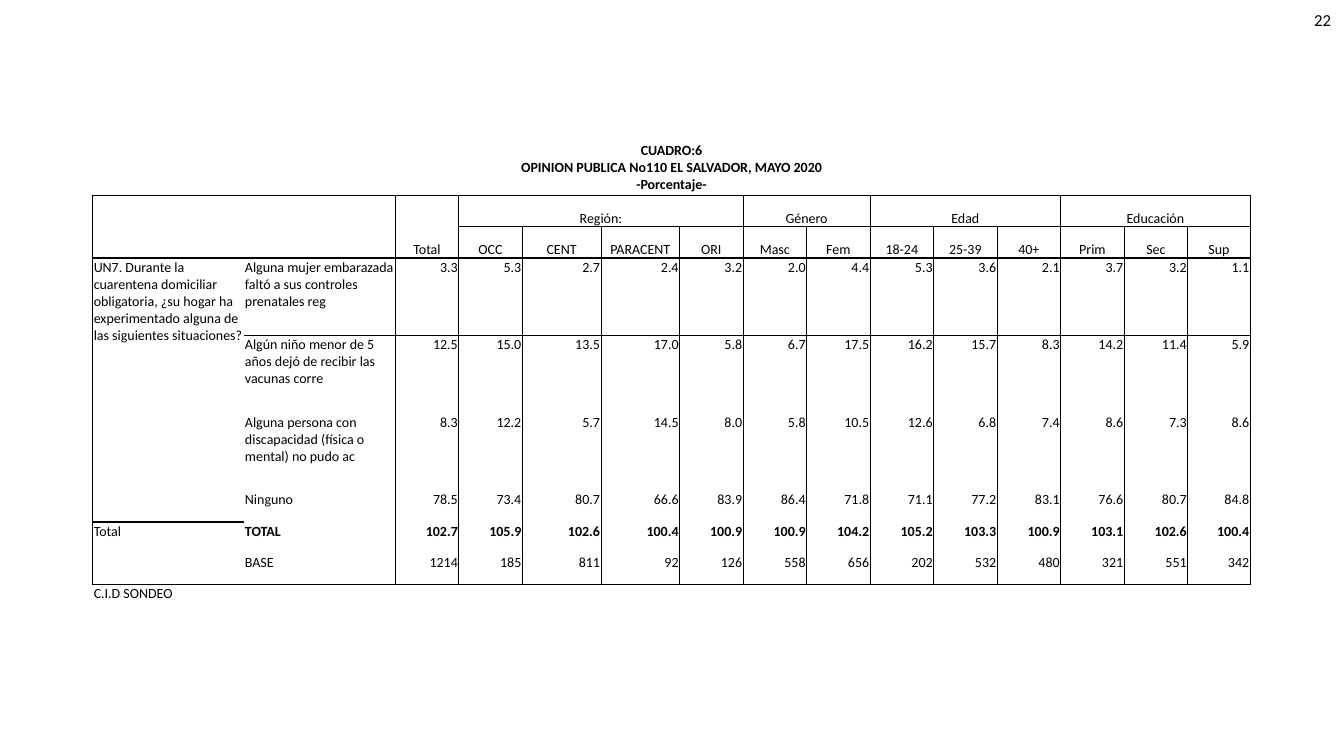
from lxml import etree
from pptx import Presentation
from pptx import util as u
from pptx.dml import color
from pptx.enum import text
from pptx.oxml import ns

BLACK = color.RGBColor(0x00, 0x00, 0x00)
NO_GRID = "{2D5ABB26-0587-4C30-8999-92F81FD0307C}"
LEFT, CENTER, RIGHT = text.PP_ALIGN.LEFT, text.PP_ALIGN.CENTER, text.PP_ALIGN.RIGHT
TOP, MIDDLE, BOTTOM = text.MSO_ANCHOR.TOP, text.MSO_ANCHOR.MIDDLE, text.MSO_ANCHOR.BOTTOM

COL_WIDTHS = [1.5] * 2 + [0.63] * 2 + [0.78] * 2 + [0.63] * 8 + [0.62]
ROW_HEIGHTS = [0.56] + [0.31] * 2 + [0.77] * 3 + [0.31] * 3 + [0.77]
LAST_COL = len(COL_WIDTHS) - 1
FIRST_DATA, LAST_DATA, SOURCE_ROW = 3, 8, 9

TITLE = ["CUADRO:6\vOPINION PUBLICA No110 EL SALVADOR, MAYO 2020", "-Porcentaje-"]
QUESTION = ("UN7. Durante la cuarentena domiciliar obligatoria, "
            "¿su hogar ha experimentado alguna de las siguientes situaciones?")
GROUPS = [
    ("Región:", ["OCC", "CENT", "PARACENT", "ORI"]),
    ("Género", ["Masc", "Fem"]),
    ("Edad", ["18-24", "25-39", "40+"]),
    ("Educación", ["Prim", "Sec", "Sup"]),
]
ANSWERS = [
    ("Alguna mujer embarazada faltó a sus controles prenatales reg",
     "3.3 5.3 2.7 2.4 3.2 2.0 4.4 5.3 3.6 2.1 3.7 3.2 1.1"),
    ("Algún niño menor de 5 años dejó de recibir las vacunas corre",
     "12.5 15.0 13.5 17.0 5.8 6.7 17.5 16.2 15.7 8.3 14.2 11.4 5.9"),
    ("Alguna persona con discapacidad (física o mental) no pudo ac",
     "8.3 12.2 5.7 14.5 8.0 5.8 10.5 12.6 6.8 7.4 8.6 7.3 8.6"),
    ("Ninguno",
     "78.5 73.4 80.7 66.6 83.9 86.4 71.8 71.1 77.2 83.1 76.6 80.7 84.8"),
    ("TOTAL",
     "102.7 105.9 102.6 100.4 100.9 100.9 104.2 105.2 103.3 100.9 103.1 102.6 100.4"),
    ("BASE",
     "1214 185 811 92 126 558 656 202 532 480 321 551 342"),
]


def borders(row, col, last_row, last_col):
    if row == 0:
        return {"B": 1}
    if row == SOURCE_ROW:
        return {"T": 1}
    thin = 0.5 if col > 2 else 0
    return {
        "L": {0: 1, 1: 0, 2: 1}.get(col, 0.5),
        "R": {0: 0, 1: 1, LAST_COL: 1}.get(last_col, 0.5),
        "T": 1 if row in (1, FIRST_DATA) else thin if row == 2 else 0,
        "B": 1 if last_row in (2, LAST_DATA) else thin if last_row == 1 else 0,
    }


class SlideBuilder:
    font = {"name": "Calibri", "size": u.Pt(10), "bold": False}

    def __init__(self, prs):
        self.s = prs.slides.add_slide(prs.slide_layouts[6])

    def fill_text(self, tf, lines, align, **changes):
        for i, line in enumerate(lines):
            p = tf.paragraphs[0] if i == 0 else tf.add_paragraph()
            p.text = line
            p.alignment = align
            for r in p.runs:
                for name, value in {**self.font, **changes}.items():
                    setattr(r.font, name, value)
                r.font.color.rgb = BLACK

    def text_box(self, box, line, align, **changes):
        tf = self.s.shapes.add_textbox(*map(u.Inches, box)).text_frame
        tf.word_wrap = True
        tf.vertical_anchor = MIDDLE
        self.fill_text(tf, [line], align, **changes)

    def add_table(self, left, top):
        box = left, top, sum(COL_WIDTHS), sum(ROW_HEIGHTS)
        frame = self.s.shapes.add_table(
            len(ROW_HEIGHTS), len(COL_WIDTHS), *map(u.Inches, box))
        self.table = frame.table
        self.table.first_row = self.table.horz_banding = False
        self.table._tbl.tblPr[0].text = NO_GRID
        for column, width in zip(self.table.columns, COL_WIDTHS):
            column.width = u.Inches(width)
        for row, height in zip(self.table.rows, ROW_HEIGHTS):
            row.height = u.Inches(height)
        for cell in self.table.iter_cells():
            for side in ("left", "right", "top"):
                setattr(cell, f"margin_{side}", u.Inches(0.01))
            cell.margin_bottom = 0

    def cell(self, row, col, lines, align=LEFT, anchor=TOP, span=(1, 1), **changes):
        c = self.table.cell(row, col)
        last_row, last_col = row + span[0] - 1, col + span[1] - 1
        if span != (1, 1):
            c.merge(self.table.cell(last_row, last_col))
        c.vertical_anchor = anchor
        self.fill_text(c.text_frame, lines, align, **changes)
        widths = borders(row, col, last_row, last_col)
        tc_pr = c._tc.get_or_add_tcPr()
        for side in "LRTB":
            width = widths.get(side, 0)
            if width:
                ln = etree.SubElement(tc_pr, ns.qn(f"a:ln{side}"), w=str(u.Pt(width)))
                fill = etree.SubElement(ln, ns.qn("a:solidFill"))
                etree.SubElement(fill, ns.qn("a:srgbClr"), val=str(BLACK))
        c.fill.background()


def main():
    prs = Presentation()
    prs.slide_width, prs.slide_height = u.Inches(13.33), u.Inches(7.5)
    b = SlideBuilder(prs)
    b.text_box((10.3, 0, 3, 0.4), "22", RIGHT, size=u.Pt(12))
    b.add_table(0.92, 1.38)

    full_width = (1, LAST_COL + 1)
    b.cell(0, 0, TITLE, CENTER, MIDDLE, full_width, bold=True)
    b.cell(1, 0, [], span=(2, 2))
    b.cell(1, 2, ["Total"], CENTER, BOTTOM, (2, 1))
    col = 3
    for group, labels in GROUPS:
        b.cell(1, col, [group], CENTER, BOTTOM, (1, len(labels)))
        for i, label in enumerate(labels):
            b.cell(2, col + i, [label], CENTER, BOTTOM)
        col += len(labels)

    b.cell(FIRST_DATA, 0, [QUESTION], span=(4, 1))
    b.cell(7, 0, ["Total"], span=(2, 1))
    for row, (answer, values) in enumerate(ANSWERS, FIRST_DATA):
        bold = answer == "TOTAL"
        b.cell(row, 1, [answer], bold=bold)
        for col, value in enumerate(values.split(), 2):
            b.cell(row, col, [value], RIGHT, bold=bold)
    b.cell(SOURCE_ROW, 0, ["C.I.D SONDEO"], span=full_width)
    prs.save("out.pptx")


if __name__ == "__main__":
    main()
